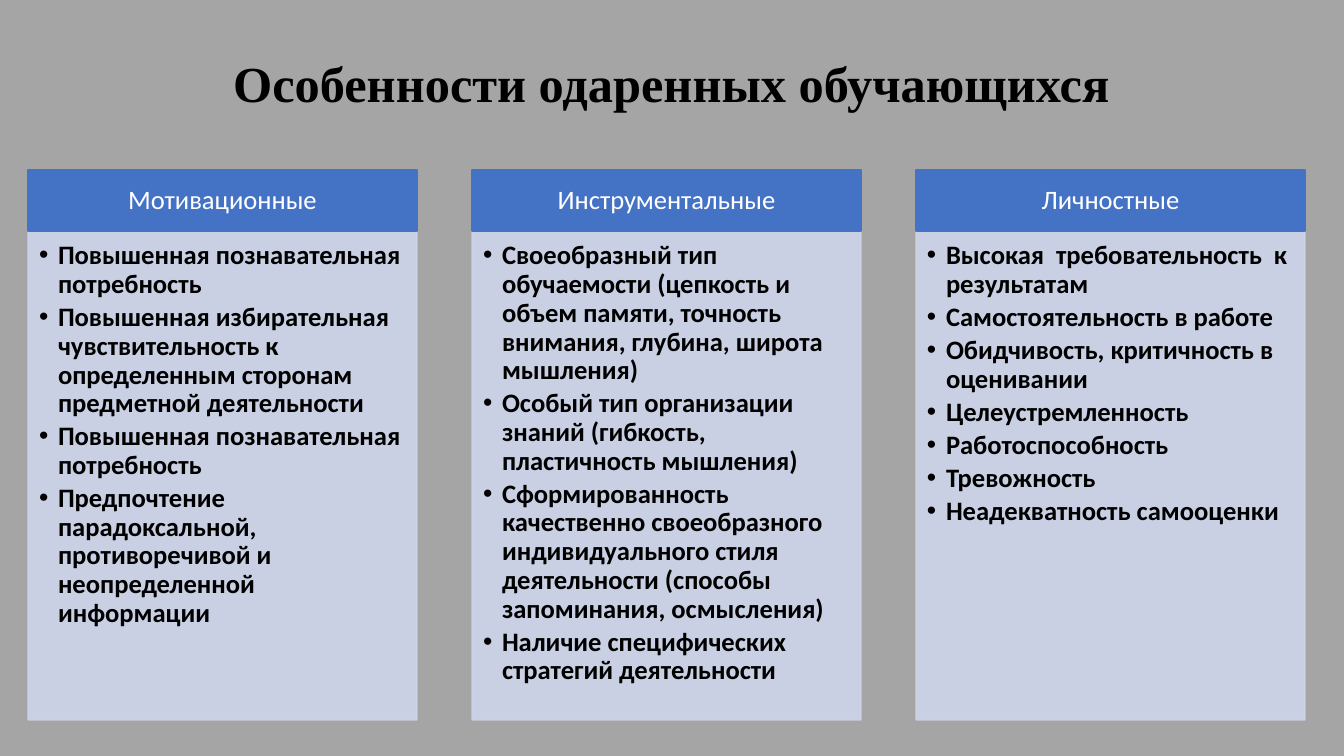
from pptx import Presentation
from pptx.dml.color import RGBColor
from pptx.enum.shapes import MSO_SHAPE as Shape
from pptx.enum.text import MSO_ANCHOR as Anchor, MSO_AUTO_SIZE as AutoSize, PP_ALIGN as Align
from pptx.oxml.ns import qn
from pptx.util import Pt
from lxml.etree import SubElement

THEME = {
    "back": "A5A5A5", "head": "4472C4", "panel": "CFD5EA",
    "dark": "000000", "light": "FFFFFF",
    "title_font": "Times New Roman", "font": "Calibri",
    "title_size": 36, "size": 19,
}
PX = 12192000 / 1344
INDENT = 19


def write(box, lines, font=THEME["font"], size=THEME["size"], color=THEME["dark"], bold=True,
          align=Align.CENTER, anchor=Anchor.MIDDLE, margins=(15, 8, 15, 8), after=0, bullet=None):
    frame = box.text_frame
    frame.word_wrap = True
    frame.auto_size = AutoSize.NONE
    frame.vertical_anchor = anchor
    frame.margin_left, frame.margin_top, frame.margin_right, frame.margin_bottom = (
        round(margin * PX) for margin in margins)
    for number, line in enumerate(lines):
        para = frame.add_paragraph() if number else frame.paragraphs[0]
        para.alignment = align
        para.line_spacing = 0.9
        para.space_before, para.space_after = Pt(0), Pt(after)
        if bullet:
            para.level = 1
            settings = para._p.get_or_add_pPr()
            settings.set("marL", str(round(INDENT * PX)))
            settings.set("indent", str(-round(INDENT * PX)))
            SubElement(settings, qn("a:buFont"), typeface="Arial")
            SubElement(settings, qn("a:buChar"), char=bullet)
        span = para.add_run()
        span.text = line
        span.font.name, span.font.size, span.font.bold = font, Pt(size), bold
        span.font.color.rgb = RGBColor.from_string(color)


def place(box, left, top, width, height, color=None, opacity=100):
    box.left, box.top, box.width, box.height = (
        round(length * PX) for length in (left, top, width, height))
    if color:
        box.fill.solid()
        box.fill.fore_color.rgb = RGBColor.from_string(color)
        box.line.color.rgb = RGBColor.from_string(color)
        box.line.width = Pt(1)
    if opacity < 100:
        for paint in box._element.spPr.iter(qn("a:srgbClr")):
            SubElement(paint, qn("a:alpha"), val=str(opacity * 1000))


COLUMNS = [
    ("Мотивационные", [
        "Повышенная познавательная потребность",
        "Повышенная избирательная чувствительность к определенным сторонам предметной деятельности",
        "Повышенная познавательная потребность",
        "Предпочтение парадоксальной, противоречивой и неопределенной информации",
    ]),
    ("Инструментальные", [
        "Своеобразный тип обучаемости (цепкость и объем памяти, точность внимания, глубина, "
        "широта мышления)",
        "Особый тип организации знаний (гибкость, пластичность мышления)",
        "Сформированность качественно своеобразного индивидуального стиля деятельности "
        "(способы запоминания, осмысления)",
        "Наличие специфических стратегий деятельности",
    ]),
    ("Личностные", [
        "Высокая  требовательность  к результатам",
        "Самостоятельность в работе",
        "Обидчивость, критичность в оценивании",
        "Целеустремленность",
        "Работоспособность",
        "Тревожность",
        "Неадекватность самооценки",
    ]),
]
LEFT, PITCH, WIDTH = 28, 444, 389
HEAD_TOP, HEAD_HEIGHT, PANEL_HEIGHT = 170, 61, 489

deck = Presentation()
deck.slide_width, deck.slide_height = round(1344 * PX), round(756 * PX)
page = deck.slides.add_slide(deck.slide_layouts.get_by_name("Comparison"))
page.background.fill.solid()
page.background.fill.fore_color.rgb = RGBColor.from_string(THEME["back"])

title, *panels = [box for box in page.placeholders]
place(title, 92, 40, 1159, 93)
write(title, ["Особенности одаренных обучающихся"],
      font=THEME["title_font"], size=THEME["title_size"])

for number, (heading, items) in enumerate(COLUMNS):
    left = LEFT + number * PITCH
    head = page.shapes.add_shape(Shape.RECTANGLE, 0, 0, 0, 0)
    head.shadow.inherit = False
    place(head, left, HEAD_TOP, WIDTH, HEAD_HEIGHT, THEME["head"])
    write(head, [heading], color=THEME["light"], bold=False)

    panel = panels[number]
    place(panel, left, HEAD_TOP + HEAD_HEIGHT, WIDTH, PANEL_HEIGHT, THEME["panel"], 90)
    write(panel, items, align=Align.LEFT, anchor=Anchor.TOP,
          margins=(11, 11, 15, 17), after=3, bullet="•")

for spare in panels[len(COLUMNS):]:
    spare._element.getparent().remove(spare._element)

deck.save("out.pptx")
